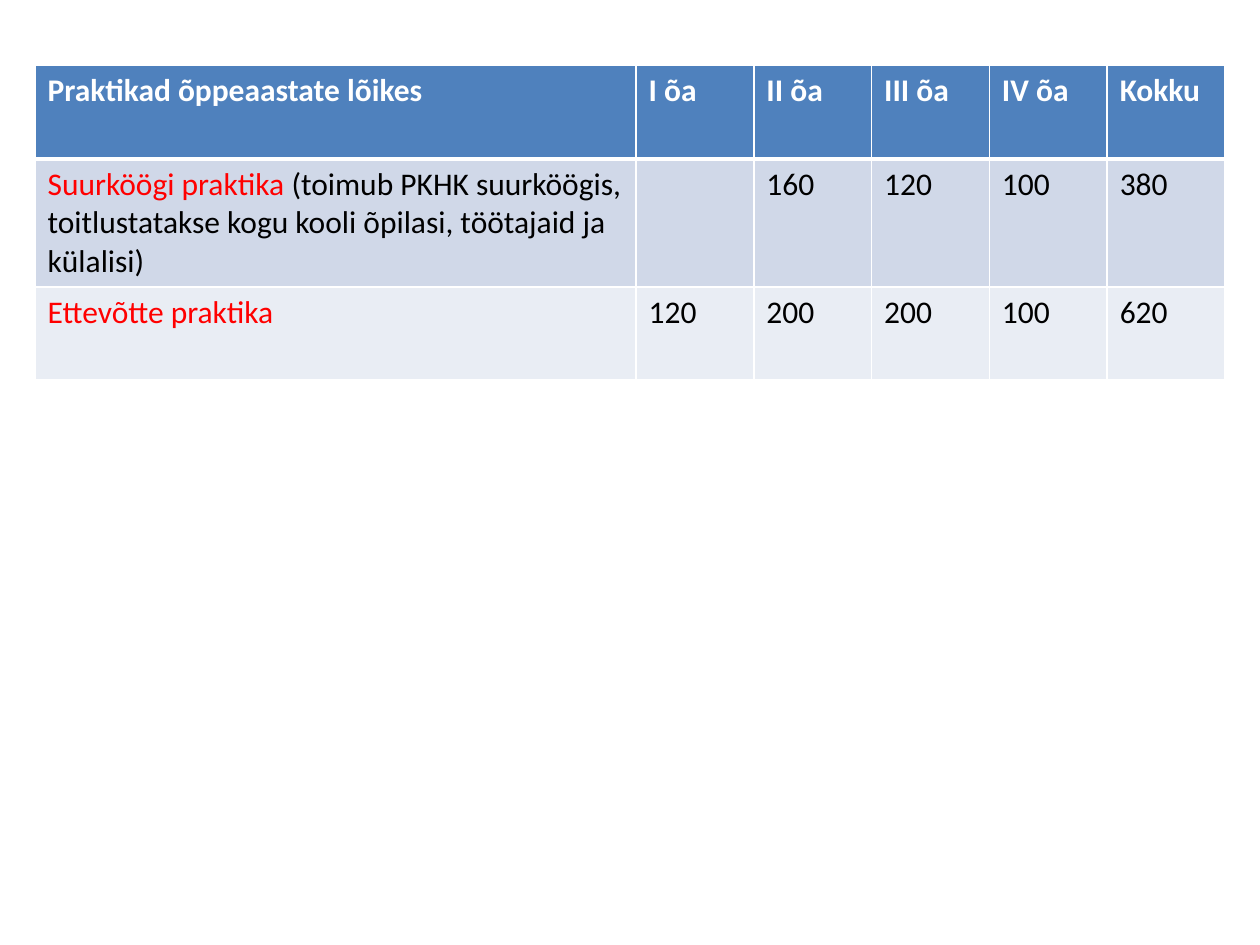
from lxml.etree import SubElement
from pptx import Presentation
from pptx.dml.color import RGBColor
from pptx.oxml.ns import qn
from pptx.util import Pt

WHITE, BLACK, RED = "FFFFFF", "000000", "FF0000"
FILLS = ["4F81BD", "D0D8E8", "E9EDF4"]
HEIGHTS = [53.3, 72, 53.3]
FIRST = 343.5
ROWS = [
    [[("Praktikad õppeaastate lõikes", WHITE)],
     "I õa", "II õa", "III õa", "IV õa", "Kokku"],
    [[("Suurköögi praktika ", RED),
      ("(toimub PKHK suurköögis, toitlustatakse kogu kooli õpilasi, "
       "töötajaid ja külalisi)", BLACK)],
     "", "160", "120", "100", "380"],
    [[("Ettevõtte praktika", RED)], "120", "200", "200", "100", "620"],
]


def color(code):
    return RGBColor.from_string(code)


def border(cell, sides):
    props = cell._tc.get_or_add_tcPr()
    for side, width in sides.items():
        line = SubElement(props, qn("a:ln" + side), w=str(Pt(width)))
        fill = SubElement(line, qn("a:solidFill"))
        SubElement(fill, qn("a:srgbClr"), val=WHITE)


def write(cell, parts, bold):
    para = cell.text_frame.paragraphs[0]
    para.font.size = Pt(18)
    for text, code in parts:
        run = para.add_run()
        run.text = text
        style = {"name": "Calibri", "size": Pt(18), "bold": bold}
        for key, value in style.items():
            setattr(run.font, key, value)
        run.font.color.rgb = color(code)


def add_hours(slide, left, top, width, height):
    count = len(ROWS[0])
    table = slide.shapes.add_table(
        len(ROWS), count, Pt(left), Pt(top), Pt(width), Pt(height)).table
    for col, column in enumerate(table.columns):
        column.width = Pt((width - FIRST) / (count - 1) if col else FIRST)
    for row, values in enumerate(ROWS):
        table.rows[row].height = Pt(HEIGHTS[row])
        head = row == 0
        for col, value in enumerate(values):
            cell = table.cell(row, col)
            border(cell, {"L": 1, "R": 1, "T": 3 if row == 1 else 1,
                          "B": 3 if head else 1})
            cell.fill.solid()
            cell.fill.fore_color.rgb = color(FILLS[row])
            if isinstance(value, str):
                value = [(value, WHITE if head else BLACK)] if value else []
            write(cell, value, head)


def main():
    deck = Presentation()
    deck.slide_width, deck.slide_height = Pt(720), Pt(540)
    slide = deck.slides.add_slide(deck.slide_layouts[6])
    add_hours(slide, 20, 37.5, 680, sum(HEIGHTS))
    deck.save("out.pptx")


if __name__ == "__main__":
    main()
